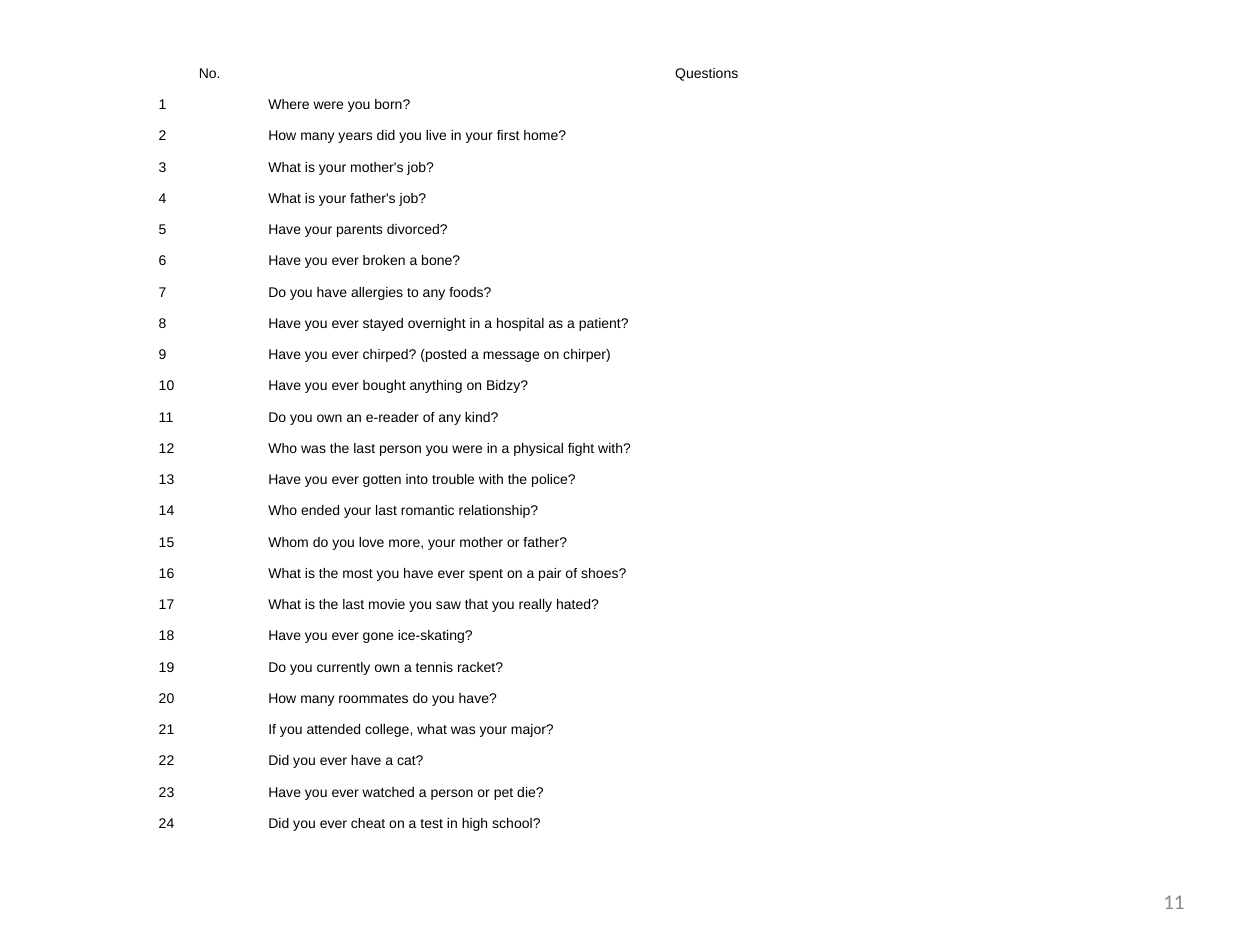
from pptx import Presentation
from pptx.dml.color import RGBColor
from pptx.enum.text import MSO_ANCHOR, PP_ALIGN
from pptx.util import Inches, Pt

QUESTIONS = [
    "Where were you born?",
    "How many years did you live in your first home?",
    "What is your mother's job?",
    "What is your father's job?",
    "Have your parents divorced?",
    "Have you ever broken a bone?",
    "Do you have allergies to any foods?",
    "Have you ever stayed overnight in a hospital as a patient?",
    "Have you ever chirped? (posted a message on chirper)",
    "Have you ever bought anything on Bidzy?",
    "Do you own an e-reader of any kind?",
    "Who was the last person you were in a physical fight with?",
    "Have you ever gotten into trouble with the police?",
    "Who ended your last romantic relationship?",
    "Whom do you love more, your mother or father?",
    "What is the most you have ever spent on a pair of shoes?",
    "What is the last movie you saw that you really hated?",
    "Have you ever gone ice-skating?",
    "Do you currently own a tennis racket?",
    "How many roommates do you have?",
    "If you attended college, what was your major?",
    "Did you ever have a cat?",
    "Have you ever watched a person or pet die?",
    "Did you ever cheat on a test in high school?",
]


def rgb(color):
    return RGBColor.from_string(color)


def write(tf, text, size=8, font="Arial", color="000000", align=PP_ALIGN.LEFT):
    p = tf.paragraphs[0]
    p.alignment = align
    r = p.add_run()
    r.text = text
    r.font.size = Pt(size)
    r.font.name = font
    r.font.bold = False
    r.font.color.rgb = rgb(color)


prs = Presentation()
prs.slide_width, prs.slide_height = Inches(10), Inches(7.5)
slide = prs.slides.add_slide(prs.slide_layouts[6])

# Slide number
sp = slide.shapes.add_textbox(Inches(7.17), Inches(6.95), Inches(2.33), Inches(0.4))
tf = sp.text_frame
tf.word_wrap = True
tf.vertical_anchor = MSO_ANCHOR.MIDDLE
write(tf, "11", size=12, font="Calibri", color="888888", align=PP_ALIGN.RIGHT)

# Question table
rows = [("No.", "Questions")]
rows += [(str(n), question) for n, question in enumerate(QUESTIONS, 1)]
height = Inches(6.21)
table = slide.shapes.add_table(
    len(rows), 2, Inches(1.23), Inches(0.49), Inches(7.89), height).table
table.first_row = table.horz_banding = False
table.columns[0].width, table.columns[1].width = Inches(0.87), Inches(7.02)

for i, texts in enumerate(rows):
    table.rows[i].height = height // len(rows)
    for j, text in enumerate(texts):
        cell = table.cell(i, j)
        cell.fill.background()
        cell.margin_left = cell.margin_right = Inches(0.03)
        cell.margin_top = cell.margin_bottom = Inches(0.03)
        write(cell.text_frame, text,
              align=PP_ALIGN.CENTER if i == 0 else PP_ALIGN.LEFT)

prs.save("out.pptx")
